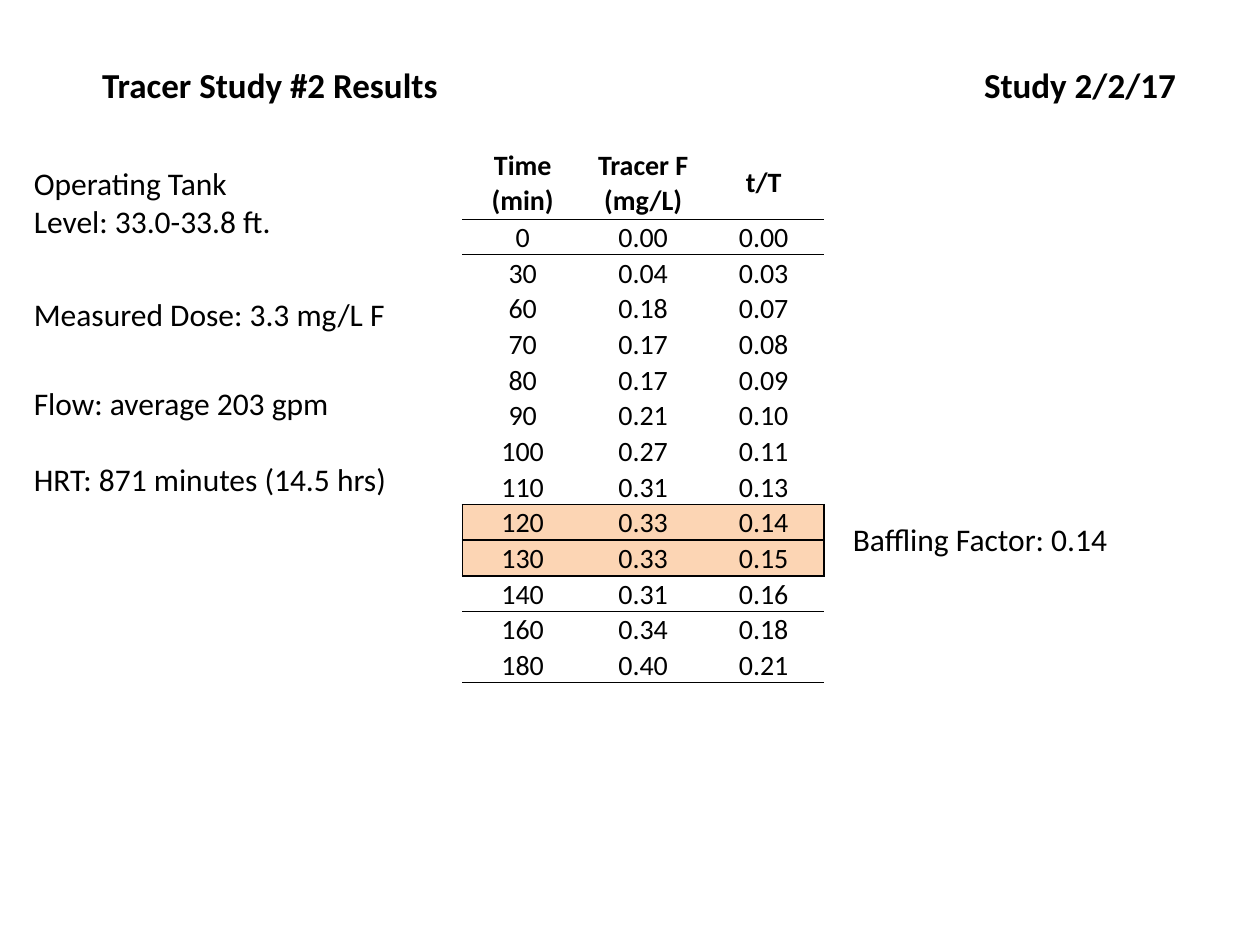
from dataclasses import dataclass

from lxml import etree
from pptx import Presentation
from pptx.dml.color import RGBColor
from pptx.enum.text import MSO_ANCHOR, MSO_AUTO_SIZE, PP_ALIGN
from pptx.oxml.ns import qn
from pptx.util import Inches, Pt

TOP, MIDDLE, BOTTOM = MSO_ANCHOR.TOP, MSO_ANCHOR.MIDDLE, MSO_ANCHOR.BOTTOM
LEFT, CENTER = PP_ALIGN.LEFT, PP_ALIGN.CENTER
FIXED = MSO_AUTO_SIZE.NONE
FONT = "Calibri"
COLORS = {"ink": "000000", "highlight": "FCD5B4"}
PLAIN_TABLE_STYLE = "{2D5ABB26-0587-4C30-8999-92F81FD0307C}"

HEADERS = ("Time (min)", "Tracer F (mg/L)", "t/T")
READINGS = (
    ("0", "0.00", "0.00"),
    ("30", "0.04", "0.03"),
    ("60", "0.18", "0.07"),
    ("70", "0.17", "0.08"),
    ("80", "0.17", "0.09"),
    ("90", "0.21", "0.10"),
    ("100", "0.27", "0.11"),
    ("110", "0.31", "0.13"),
    ("120", "0.33", "0.14"),
    ("130", "0.33", "0.15"),
    ("140", "0.31", "0.16"),
    ("160", "0.34", "0.18"),
    ("180", "0.40", "0.21"),
)
HIGHLIGHT_ROWS = (9, 10)
TABLE_WIDTH, TABLE_HEIGHT, HEADER_HEIGHT = 2.87, 4.25, 0.57


@dataclass
class Note:
    lines: tuple[str, ...]
    left: float
    top: float
    width: float
    height: float
    wrap: bool = False
    gap: float = 0


NOTES = (
    Note(("Flow: average 203 gpm", "HRT: 871 minutes (14.5 hrs)"),
         0.17, 3, 4.06, 1.01, wrap=True, gap=22),
    Note(("Operating Tank", "Level: 33.0-33.8 ft."), 0.17, 1.25, 2.11, 0.71),
    Note(("Baffling Factor: 0.14",), 6.67, 4.08, 2.25, 0.4),
    Note(("Measured Dose: 3.3 mg/L F",), 0.17, 2.29, 3.02, 0.4),
)


def format_text(frame, size: float, bold: bool = False, align=LEFT) -> None:
    for para in frame.paragraphs:
        para.alignment = align
        for span in para.runs:
            span.font.name = FONT
            span.font.size = Pt(size)
            span.font.bold = bold
            span.font.color.rgb = RGBColor.from_string(COLORS["ink"])


def add_title(page) -> None:
    title = page.shapes.title
    title.left, title.top = Inches(0.71), Inches(0.45)
    title.width, title.height = Inches(8.96), Inches(0.44)
    frame = title.text_frame
    frame.text = "Tracer Study #2 Results\tStudy 2/2/17"
    frame.auto_size = FIXED
    frame.word_wrap = True
    frame.vertical_anchor = TOP
    format_text(frame, 20, bold=True)
    properties = frame.paragraphs[0]._p.get_or_add_pPr()
    tabs = etree.SubElement(properties, qn("a:tabLst"))
    etree.SubElement(tabs, qn("a:tab"), pos=str(Inches(7)), algn="l")


def add_note(page, note: Note) -> None:
    box = page.shapes.add_textbox(Inches(note.left), Inches(note.top),
                                  Inches(note.width), Inches(note.height))
    frame = box.text_frame
    frame.text = "\n".join(note.lines)
    frame.word_wrap = note.wrap
    format_text(frame, 18)
    for para in frame.paragraphs[1:]:
        para.space_before = Pt(note.gap)


def cell_borders(row: int, column: int) -> dict[str, float]:
    first, last = HIGHLIGHT_ROWS
    borders = {}
    if first <= row <= last:
        if column == 0:
            borders["L"] = 1
        if column == len(HEADERS) - 1:
            borders["R"] = 1
    if row == 1:
        borders["T"] = 0.5
    elif row in (first, last + 1):
        borders["T"] = 1
    if row in (0, len(READINGS)):
        borders["B"] = 0.5
    elif row in (first - 1, last):
        borders["B"] = 1
    return borders


def draw_border(cell, side: str, width: float) -> None:
    properties = cell._tc.get_or_add_tcPr()
    line = etree.SubElement(properties, qn(f"a:ln{side}"), w=str(Pt(width)))
    fill = etree.SubElement(line, qn("a:solidFill"))
    etree.SubElement(fill, qn("a:srgbClr"), val=COLORS["ink"])


def fill_cell(cell, row: int, column: int, text: str) -> None:
    header = row == 0
    cell.text = text
    cell.margin_left = cell.margin_right = 0
    cell.margin_top = cell.margin_bottom = 0
    cell.vertical_anchor = MIDDLE if header else BOTTOM
    format_text(cell.text_frame, 16, bold=header, align=CENTER)
    for side, width in cell_borders(row, column).items():
        draw_border(cell, side, width)
    if row in HIGHLIGHT_ROWS:
        cell.fill.solid()
        cell.fill.fore_color.rgb = RGBColor.from_string(COLORS["highlight"])
    else:
        cell.fill.background()


def add_results_table(page) -> None:
    rows = (HEADERS, *READINGS)
    table = page.shapes.add_table(
        len(rows), len(HEADERS), Inches(3.67), Inches(1.17),
        Inches(TABLE_WIDTH), Inches(TABLE_HEIGHT)).table
    table.first_row = table.horz_banding = False
    table._tbl.tblPr.find(qn("a:tableStyleId")).text = PLAIN_TABLE_STYLE
    for column in table.columns:
        column.width = Inches(TABLE_WIDTH / len(HEADERS))
    reading_height = (TABLE_HEIGHT - HEADER_HEIGHT) / len(READINGS)
    for row, values in enumerate(rows):
        table.rows[row].height = Inches(reading_height if row else HEADER_HEIGHT)
        for column, text in enumerate(values):
            fill_cell(table.cell(row, column), row, column, text)


def main() -> None:
    deck = Presentation()
    deck.slide_width, deck.slide_height = Inches(10), Inches(7.5)
    page = deck.slides.add_slide(deck.slide_layouts[5])
    add_title(page)
    for note in NOTES:
        add_note(page, note)
    add_results_table(page)
    deck.save("out.pptx")


if __name__ == "__main__":
    main()
